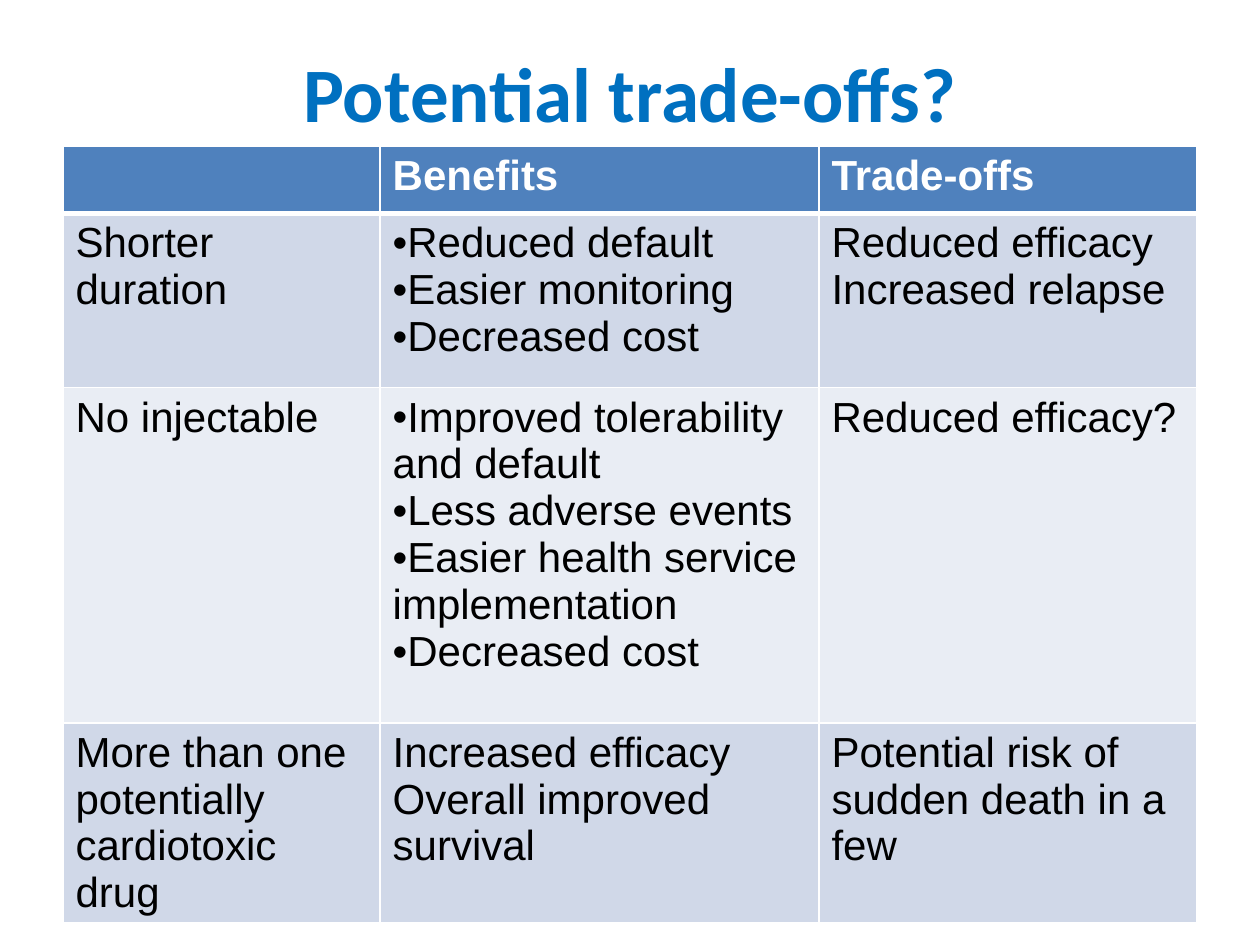
"""Build a slide with a table of treatment benefits and trade-offs."""
import pptx
import pptx.dml.color
import pptx.enum.text
import pptx.oxml
import pptx.oxml.ns
import pptx.util
from lxml import etree

Pt = pptx.util.Pt
RGBColor = pptx.dml.color.RGBColor

TITLE = "Potential trade-offs?"
BULLET = "•"
ROWS = [
    ([], ["Benefits"], ["Trade-offs"]),
    (["Shorter duration"],
     ["•Reduced default", "•Easier monitoring", "•Decreased cost"],
     ["Reduced efficacy", "Increased relapse"]),
    (["No injectable"],
     ["•Improved tolerability and default", "•Less adverse events",
      "•Easier health service implementation", "•Decreased cost"],
     ["Reduced efficacy?"]),
    (["More than one potentially cardiotoxic drug"],
     ["Increased efficacy", "Overall improved survival"],
     ["Potential risk of sudden death in a few"]),
]
COLUMN_WIDTHS = [181.2, 250.8, 216]
ROW_HEIGHTS = [38.4, 99.6, 191.6, 99.6]
LEFT, TITLE_TOP, TABLE_TOP = 36, 21.6, 83.6
COLORS = {"title": "0070C0", "header": "4F81BD", "odd": "D0D8E8",
          "even": "E9EDF4", "border": "FFFFFF", "header_text": "FFFFFF",
          "text": "000000"}


def rgb(name):
    return RGBColor.from_string(COLORS[name])


def format_run(run, font_name, size, color, bold):
    run.font.name = font_name
    run.font.size = Pt(size)
    run.font.bold = bold
    run.font.color.rgb = rgb(color)


def add_borders(cell, widths):
    properties = cell._tc.get_or_add_tcPr()
    for position, (side, width) in enumerate(widths.items()):
        line = pptx.oxml.parse_xml(
            f'<a:ln{side} {pptx.oxml.ns.nsdecls("a")} w="{Pt(width)}"><a:solidFill>'
            f'<a:srgbClr val="{COLORS["border"]}"/></a:solidFill></a:ln{side}>')
        properties.insert(position, line)


def add_bullet(paragraph):
    properties = paragraph._p.get_or_add_pPr()
    properties.set("marL", "0")
    properties.set("indent", "0")
    font = etree.SubElement(properties, pptx.oxml.ns.qn("a:buFont"))
    font.set("typeface", "Arial")
    bullet = etree.SubElement(properties, pptx.oxml.ns.qn("a:buChar"))
    bullet.set("char", BULLET)


def fill_cell(cell, lines, row_index):
    header = row_index == 0
    fill = "header" if header else ("odd" if row_index % 2 else "even")
    cell.fill.solid()
    cell.fill.fore_color.rgb = rgb(fill)
    add_borders(cell, {"L": 1, "R": 1, "T": 3 if row_index == 1 else 1,
                       "B": 3 if header else 1})
    cell.text_frame.text = "\n".join(line.lstrip(BULLET) for line in lines)
    for line, paragraph in zip(lines, cell.text_frame.paragraphs):
        if line.startswith(BULLET):
            add_bullet(paragraph)
        for run in paragraph.runs:
            format_run(run, "Arial", 24, "header_text" if header else "text", header)


def add_title(slide, width):
    title = slide.shapes.title
    title.left, title.top = Pt(LEFT), Pt(TITLE_TOP)
    title.width, title.height = Pt(width), Pt(TABLE_TOP - TITLE_TOP)
    title.text_frame.text = TITLE
    title.text_frame.vertical_anchor = pptx.enum.text.MSO_ANCHOR.MIDDLE
    paragraph = title.text_frame.paragraphs[0]
    paragraph.alignment = pptx.enum.text.PP_ALIGN.CENTER
    format_run(paragraph.runs[0], "Calibri", 44, "title", True)


def add_trade_off_table(slide, width):
    table = slide.shapes.add_table(
        len(ROWS), len(COLUMN_WIDTHS), Pt(LEFT), Pt(TABLE_TOP),
        Pt(width), Pt(sum(ROW_HEIGHTS))).table
    for column, column_width in zip(table.columns, COLUMN_WIDTHS):
        column.width = Pt(column_width)
    for row_index, (row, height) in enumerate(zip(table.rows, ROW_HEIGHTS)):
        row.height = Pt(height)
        for cell, lines in zip(row.cells, ROWS[row_index]):
            fill_cell(cell, lines, row_index)


def main():
    presentation = pptx.Presentation()
    presentation.slide_width, presentation.slide_height = Pt(720), Pt(540)
    slide = presentation.slides.add_slide(presentation.slide_layouts[5])
    width = sum(COLUMN_WIDTHS)
    add_title(slide, width)
    add_trade_off_table(slide, width)
    presentation.save("out.pptx")


if __name__ == "__main__":
    main()
